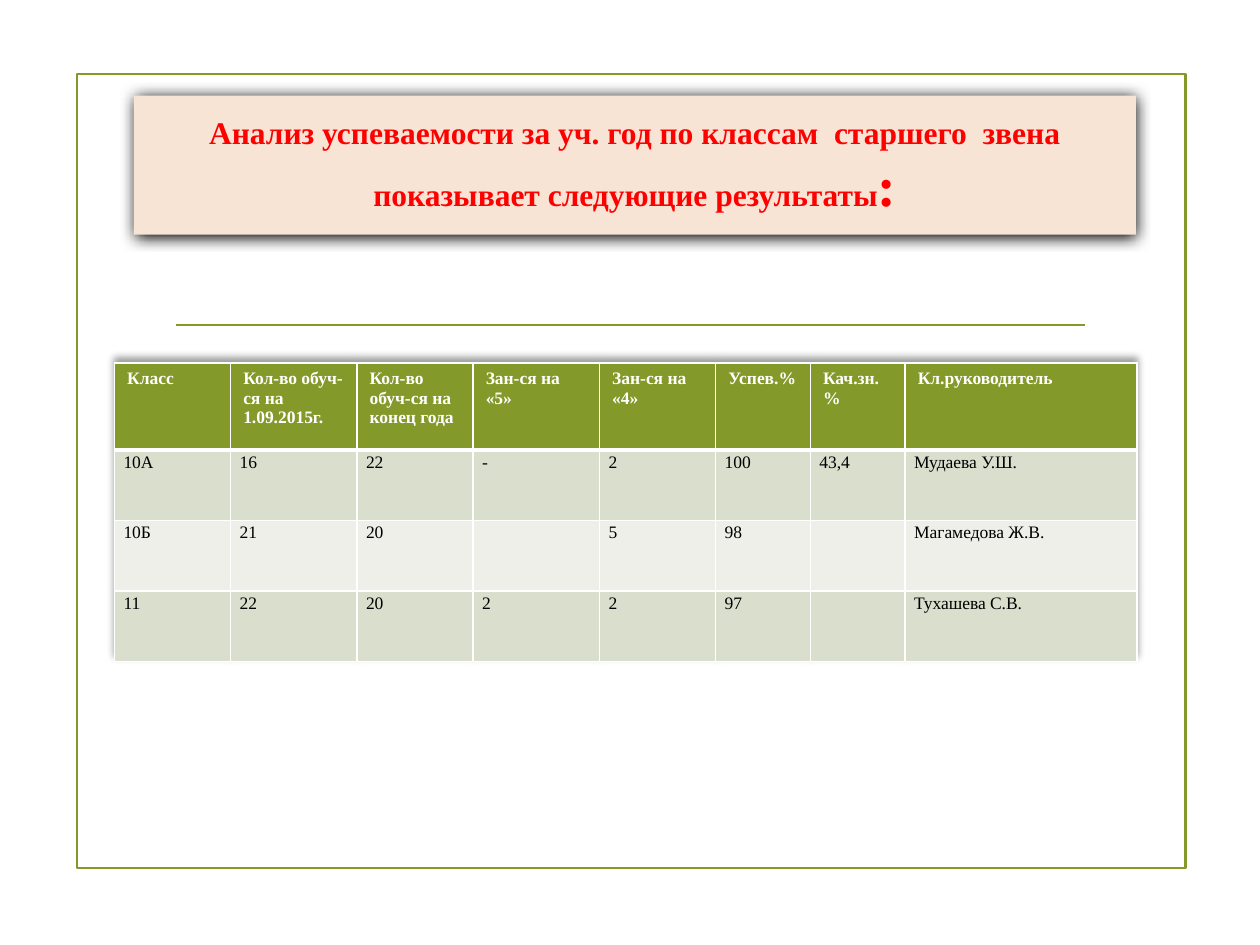
from pptx import Presentation
from pptx import util as u
from pptx.dml.color import RGBColor
from pptx.enum import shapes, text
from pptx.oxml import parse_xml
from pptx.oxml.ns import nsdecls

GREEN = RGBColor(0x83, 0x99, 0x2A)
PEACH = RGBColor(0xF7, 0xE4, 0xD4)
RED = RGBColor(0xFF, 0, 0)
WHITE = RGBColor(0xFF, 0xFF, 0xFF)
BLACK = RGBColor(0, 0, 0)
BANDS = (RGBColor(0xD9, 0xDE, 0xCD), RGBColor(0xED, 0xEF, 0xE8))

TITLE = "Анализ успеваемости за уч. год по классам  старшего  звена показывает следующие результаты"
HEADER = ("Класс", "Кол-во обуч-ся на 1.09.2015г.", "Кол-во обуч-ся на  конец года",
          "Зан-ся на «5»", "Зан-ся на «4»", "Успев.%", "Кач.зн. %", "Кл.руководитель")
ROWS = (
    ("10А", "16", "22", "-", "2", "100", "43,4", "Мудаева У.Ш."),
    ("10Б", "21", "20", "", "5", "98", "", "Магамедова Ж.В."),
    ("11", "22", "20", "2", "2", "97", "", "Тухашева С.В."),
)
COLUMN_WIDTHS = (2.34, 2.55, 2.34, 2.55, 2.34, 1.91, 1.91, 4.67)
HEADER_HEIGHT, ROW_HEIGHT = 1.75, 1.42

HEADER_FONT = {"name": "Times New Roman", "size": u.Pt(10), "bold": True}
BODY_FONT = {**HEADER_FONT, "bold": False}
TITLE_FONT = {**HEADER_FONT, "size": u.Pt(18)}
COLON_FONT = {**TITLE_FONT, "size": u.Pt(32)}
BODY_MARGINS = {"margin_left": u.Cm(0.18), "margin_right": u.Cm(0.18),
                "margin_top": 0, "margin_bottom": 0}


def set_attributes(target, values):
    for name, value in values.items():
        setattr(target, name, value)


def add_run(paragraph, wording, font, color):
    run = paragraph.add_run()
    run.text = wording
    set_attributes(run.font, font)
    run.font.color.rgb = color


def make_shadow(blur, distance, direction, opacity):
    """Return an effect list; lengths in points, direction in degrees, opacity in percent."""
    return parse_xml(
        f'<a:effectLst {nsdecls("a")}><a:outerShdw blurRad="{u.Pt(blur)}" '
        f'dist="{u.Pt(distance)}" dir="{direction * 60000}" algn="ctr" rotWithShape="0">'
        f'<a:srgbClr val="{BLACK}"><a:alpha val="{opacity * 1000}"/></a:srgbClr>'
        '</a:outerShdw></a:effectLst>')


def style_line(line):
    line.color.rgb = GREEN
    line.width = u.Pt(1.25)


def add_frame(slide):
    frame = slide.shapes.add_shape(shapes.MSO_SHAPE.RECTANGLE,
                                   u.Cm(1.55), u.Cm(1.5), u.Cm(22.35), u.Cm(16))
    frame.shadow.inherit = False
    frame.fill.background()
    style_line(frame.line)


def add_divider(slide):
    divider = slide.shapes.add_connector(shapes.MSO_CONNECTOR.STRAIGHT,
                                         u.Cm(3.55), u.Cm(6.55), u.Cm(21.88), u.Cm(6.55))
    style_line(divider.line)
    divider.element.spPr.append(parse_xml(f'<a:effectLst {nsdecls("a")}/>'))


def fill_title(slide):
    title = slide.shapes.title
    title.element.getparent().append(title.element)
    set_attributes(title, {"left": u.Cm(2.7), "top": u.Cm(1.93),
                           "width": u.Cm(20.2), "height": u.Cm(2.8)})
    title.fill.solid()
    title.fill.fore_color.rgb = PEACH
    title.element.spPr.append(make_shadow(8.5, 1, 90, 100))
    set_attributes(title.text_frame, {"word_wrap": True,
                                      "auto_size": text.MSO_AUTO_SIZE.NONE,
                                      "vertical_anchor": text.MSO_ANCHOR.MIDDLE})
    paragraph = title.text_frame.paragraphs[0]
    paragraph.alignment = text.PP_ALIGN.CENTER
    add_run(paragraph, TITLE, TITLE_FONT, RED)
    add_run(paragraph, ":", COLON_FONT, RED)


def add_borders(cell, top=1, bottom=1):
    properties = cell._tc.get_or_add_tcPr()
    for side, width in {"L": 1, "R": 1, "T": top, "B": bottom}.items():
        properties.append(parse_xml(
            f'<a:ln{side} {nsdecls("a")} w="{u.Pt(width)}"><a:solidFill>'
            f'<a:srgbClr val="{WHITE}"/></a:solidFill></a:ln{side}>'))


def fill_cell(cell, wording, font, color, background):
    cell.fill.solid()
    cell.fill.fore_color.rgb = background
    if wording:
        add_run(cell.text_frame.paragraphs[0], wording, font, color)


def add_results_table(slide):
    height = HEADER_HEIGHT + ROW_HEIGHT * len(ROWS)
    table = slide.shapes.add_table(len(ROWS) + 1, len(HEADER), u.Cm(2.31), u.Cm(7.32),
                                   u.Cm(sum(COLUMN_WIDTHS)), u.Cm(height)).table
    table._tbl.tblPr.insert(0, make_shadow(4, 3, 270, 40))
    for column, width in zip(table.columns, COLUMN_WIDTHS):
        column.width = u.Cm(width)
    for index, row in enumerate(table.rows):
        row.height = u.Cm(ROW_HEIGHT if index else HEADER_HEIGHT)

    for cell, wording in zip(table.rows[0].cells, HEADER):
        add_borders(cell, bottom=3)
        fill_cell(cell, wording, HEADER_FONT, WHITE, GREEN)
    for index, values in enumerate(ROWS):
        for cell, wording in zip(table.rows[index + 1].cells, values):
            add_borders(cell, top=1 if index else 3)
            set_attributes(cell, BODY_MARGINS)
            cell.text_frame.paragraphs[0].line_spacing = 1.15
            fill_cell(cell, wording, BODY_FONT, BLACK, BANDS[index % 2])


def main():
    presentation = Presentation()
    presentation.slide_width, presentation.slide_height = u.Cm(25.4), u.Cm(19.05)
    slide = presentation.slides.add_slide(presentation.slide_layouts[5])
    add_frame(slide)
    add_divider(slide)
    fill_title(slide)
    add_results_table(slide)
    presentation.save("out.pptx")


if __name__ == "__main__":
    main()
